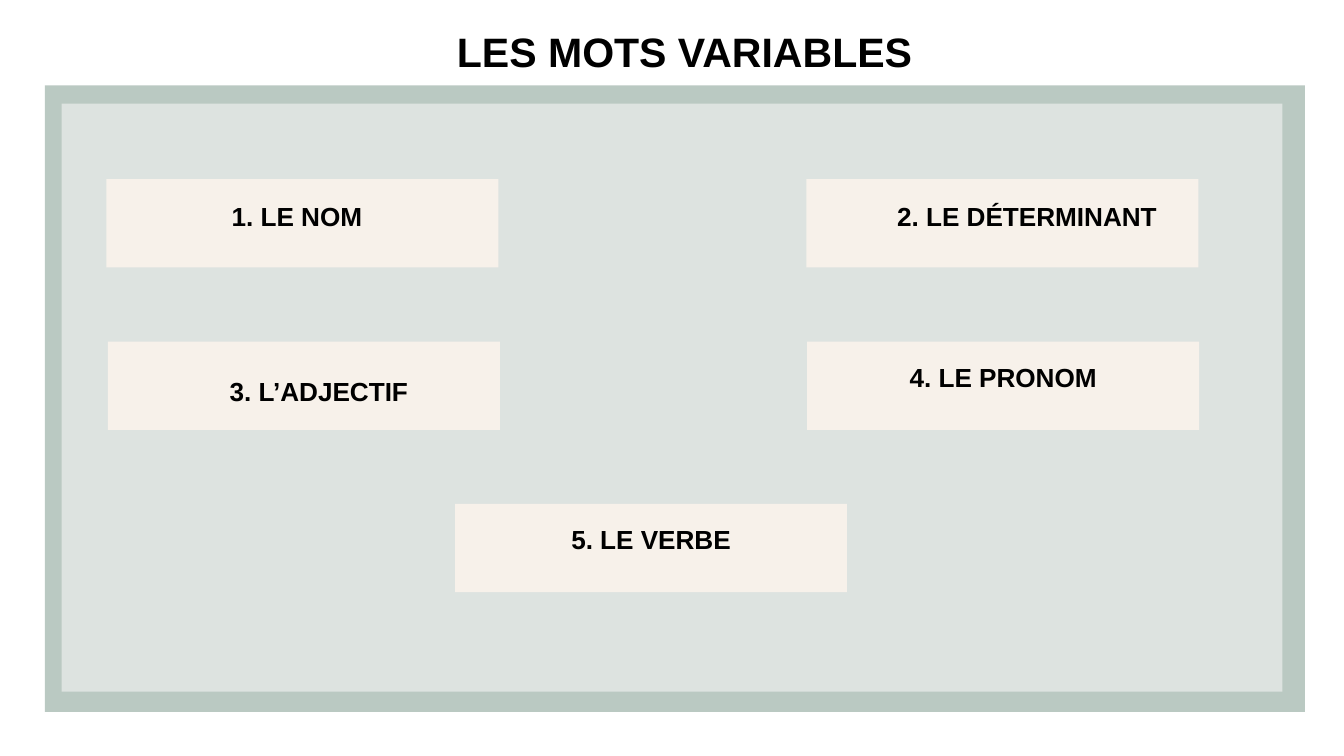
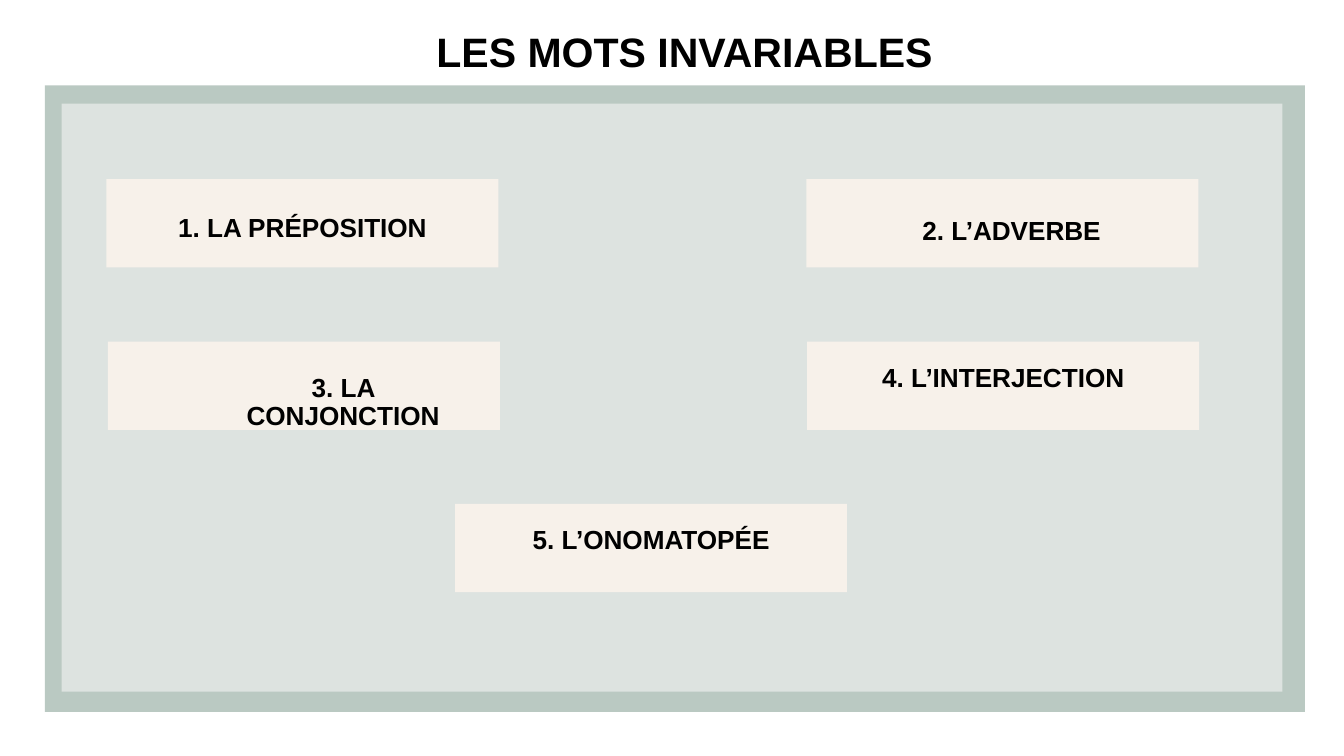
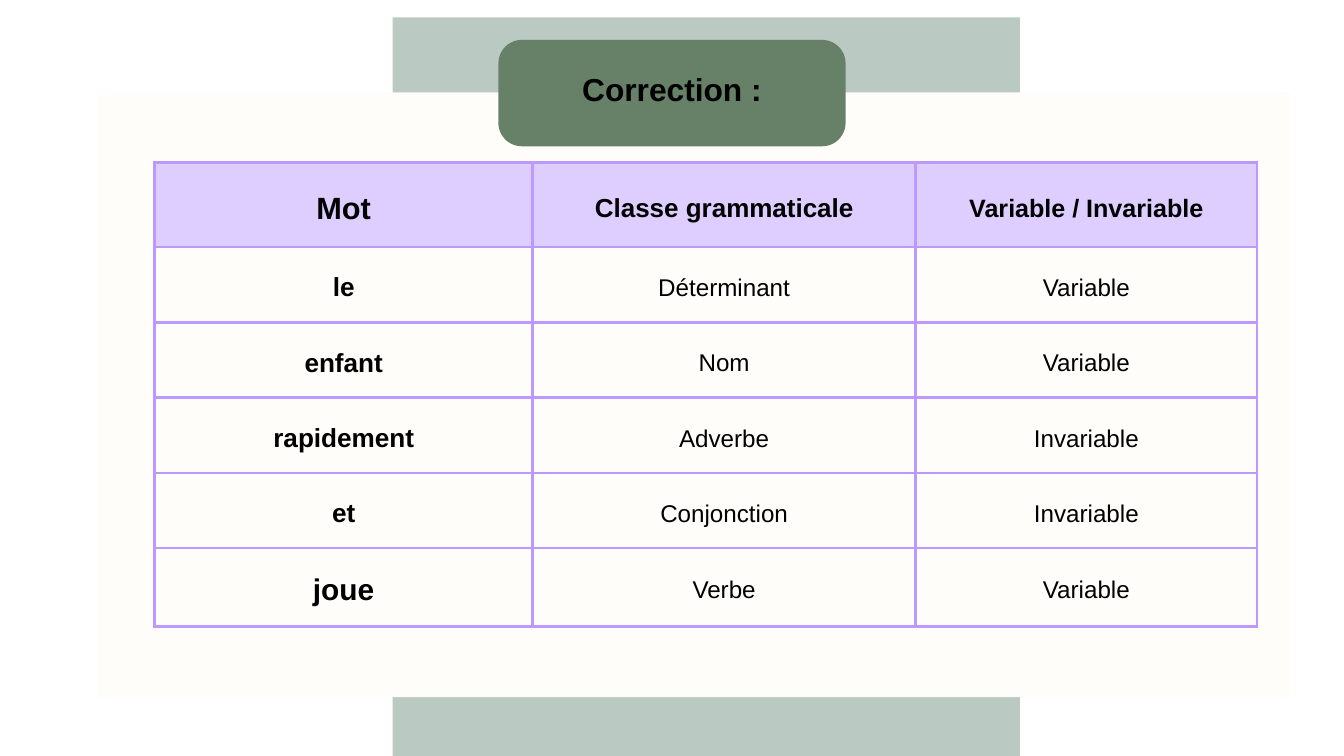
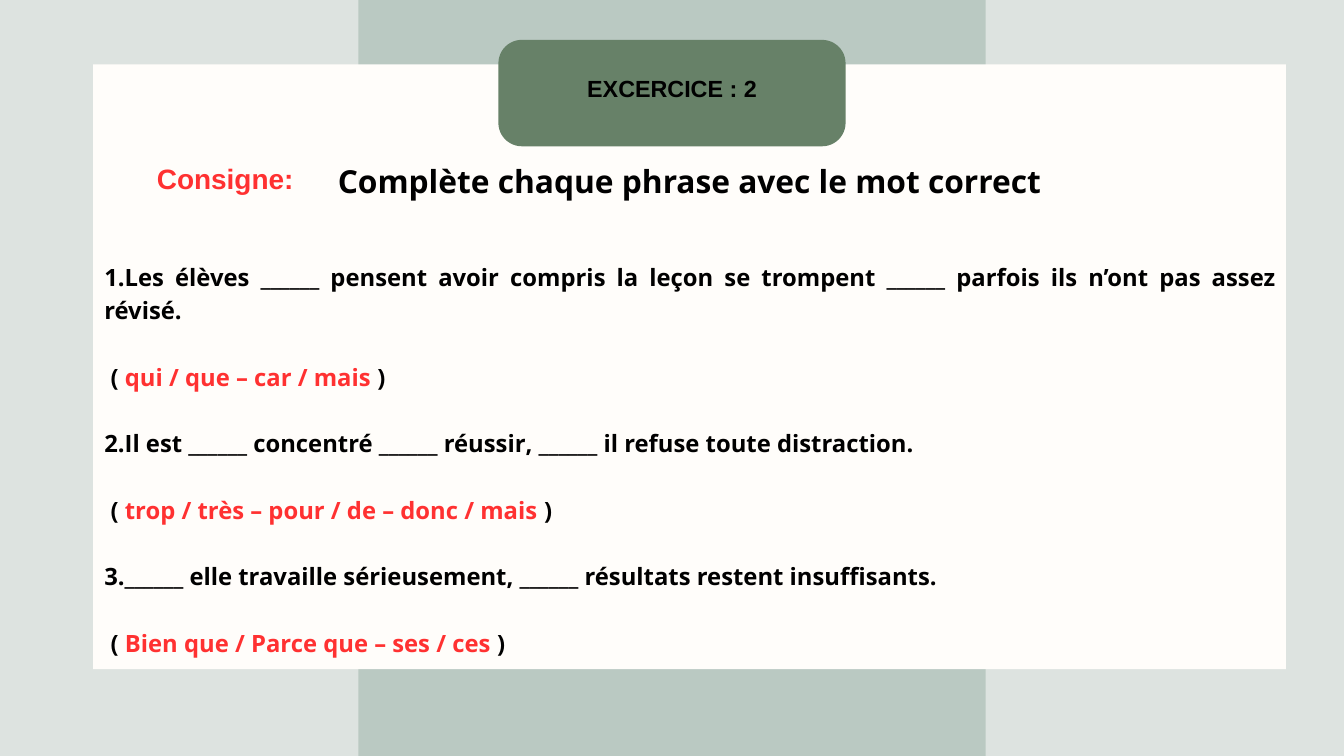
from dataclasses import dataclass

from lxml import etree
from pptx import Presentation
from pptx import util as u
from pptx.dml import color
from pptx.enum import shapes, text
from pptx.oxml import ns

EMU_PER_PX = 9525
CENTER, LEFT = text.PP_ALIGN.CENTER, text.PP_ALIGN.LEFT
JUSTIFY = text.PP_ALIGN.JUSTIFY
TOP, MIDDLE = text.MSO_ANCHOR.TOP, text.MSO_ANCHOR.MIDDLE
RECTANGLE = shapes.MSO_SHAPE.RECTANGLE
ROUNDED = shapes.MSO_SHAPE.ROUNDED_RECTANGLE


@dataclass(frozen=True)
class Style:
    """Type size and line pitch in points, with face and weight."""

    size: float
    pitch: float = None
    bold: bool = True
    font: str = "Arial"


@dataclass(frozen=True)
class Theme:
    """Colours and type styles shared by the slides."""

    white: str = "FFFFFF"
    ink: str = "000000"
    red: str = "FF3131"
    sage: str = "BAC9C2"
    mist: str = "DDE3E0"
    sand: str = "F7F1EA"
    cream: str = "FFFDFA"
    moss: str = "678168"
    lilac: str = "DECDFF"
    violet: str = "BB99FF"
    title: Style = Style(44, 49)
    caption: Style = Style(28, 29.7)
    loose_caption: Style = Style(28)
    correction: Style = Style(34, 47.6)
    exercise: Style = Style(25, 35)
    label: Style = Style(30, 42)
    instruction: Style = Style(34, 47.6, font="Open Sans")
    sentence: Style = Style(25.5, 35.7, font="Open Sans")
    headings: tuple = (Style(32.9, 46), Style(27.9, 39), Style(26.9, 37.6))
    word: Style = Style(28, 37.6)
    big_word: Style = Style(32, 41.8)
    answer: Style = Style(25.9, 36.2, bold=False)


THEME = Theme()
CARD_SIZE = (560, 126)
CARD_SPOTS = [(152, 256), (1152, 256), (154, 488), (1153, 488), (650, 720)]
CARD_INSET = 33


def px(length):
    """Turn px into EMU."""
    return u.Emu(length * EMU_PER_PX)


def rgb(code):
    """Turn a hex code into a colour."""
    return color.RGBColor.from_string(code)


def new_slide(deck, layout, background):
    """Add a slide with a plain background."""
    slide = deck.slides.add_slide(deck.slide_layouts.get_by_name(layout))
    slide.background.fill.solid()
    slide.background.fill.fore_color.rgb = rgb(background)
    return slide


def write(paragraph, parts, style, align=CENTER):
    """Write (wording, colour) parts as the runs of a paragraph."""
    paragraph.alignment = align
    if style.pitch:
        paragraph.line_spacing = u.Pt(style.pitch)
    for wording, ink in parts:
        run = paragraph.add_run()
        run.text = wording
        run.font.name = style.font
        run.font.size = u.Pt(style.size)
        run.font.bold = style.bold
        run.font.color.rgb = rgb(ink)


def set_frame(holder, inset, anchor=TOP, top=None):
    """Set wrapping, anchor and insets, and return the text frame."""
    frame = holder.text_frame
    frame.word_wrap = True
    frame.auto_size = text.MSO_AUTO_SIZE.NONE
    frame.vertical_anchor = anchor
    frame.margin_left = frame.margin_right = frame.margin_bottom = px(inset)
    frame.margin_top = px(inset if top is None else top)
    return frame


def add_block(slide, box, fill, kind=RECTANGLE):
    """Add a flat filled shape without outline."""
    block = slide.shapes.add_shape(kind, *map(px, box))
    block.shadow.inherit = False
    block.fill.solid()
    block.fill.fore_color.rgb = rgb(fill)
    block.line.fill.background()
    return block


def add_label(slide, box, wording, style, ink=THEME.ink, align=CENTER, inset=0):
    """Add a one-paragraph text box."""
    label = slide.shapes.add_textbox(*map(px, box))
    write(set_frame(label, inset).paragraphs[0], [(wording, ink)], style, align)


def place(holder, box):
    """Move a placeholder to a box, in front of what is drawn so far."""
    holder.left, holder.top, holder.width, holder.height = map(px, box)
    siblings = holder._element.getparent()
    siblings.append(holder._element)


def set_title(slide, box, wording, style, inset=0, anchor=TOP):
    """Place and write the title."""
    title = slide.shapes.title
    place(title, box)
    frame = set_frame(title, inset, anchor)
    write(frame.paragraphs[0], [(wording, THEME.ink)], style)


def add_word_classes(deck, heading, captions, loose):
    """Build a framed slide of five cards, with loose captions for the first three."""
    slide = new_slide(deck, "Title Only", THEME.white)
    add_block(slide, (64, 122, 1800, 895), THEME.sage)
    set_title(slide, (424, 43, 1109, 66), heading, THEME.title)
    add_block(slide, (88, 148, 1744, 840), THEME.mist)
    cards = [add_block(slide, spot + CARD_SIZE, THEME.sand) for spot in CARD_SPOTS]
    for card, caption in zip(cards[3:], captions[3:]):
        frame = set_frame(card, 10, top=CARD_INSET)
        write(frame.paragraphs[0], [(caption, THEME.ink)], THEME.caption)
    for caption, (box, style, align) in zip(captions, loose):
        add_label(slide, box, caption, style, align=align, inset=5)


def add_worksheet(deck, layout, background, band, panel, heading, style):
    """Build a slide with a vertical band, a cream panel and a title badge."""
    slide = new_slide(deck, layout, background)
    add_block(slide, band + (896, 1080), THEME.sage)
    add_block(slide, panel + (1704, 864), THEME.cream)
    badge = add_block(slide, (712, 57, 496, 152), THEME.moss, ROUNDED)
    badge.adjustments[0] = 0.22
    set_title(slide, (712, 35, 496, 174), heading, style, 6, MIDDLE)
    return slide


def set_borders(cell, ink, points):
    """Draw the four borders of a cell."""
    properties = cell._tc.get_or_add_tcPr()
    for index, side in enumerate("LRTB"):
        edge = etree.Element(ns.qn(f"a:ln{side}"), w=str(u.Pt(points)))
        fill = etree.SubElement(edge, ns.qn("a:solidFill"))
        etree.SubElement(fill, ns.qn("a:srgbClr"), val=ink)
        properties.insert(index, edge)


def fill_cell(cell, wording, style, fill=None):
    """Write, fill and border a table cell."""
    cell.vertical_anchor = MIDDLE
    cell.margin_left = cell.margin_right = px(20)
    cell.margin_top = cell.margin_bottom = px(20)
    if fill:
        cell.fill.solid()
        cell.fill.fore_color.rgb = rgb(fill)
    else:
        cell.fill.background()
    set_borders(cell, THEME.violet, 3)
    write(cell.text_frame.paragraphs[0], [(wording, THEME.ink)], style)


def add_answers(slide, headings, answers):
    """Add the table of words and their classes."""
    widths = (540, 547, 488)
    heights = (121, 108, 107, 108, 107, 112)
    box = (221, 232, sum(widths), sum(heights))
    grid = slide.shapes.add_table(len(heights), len(widths), *map(px, box)).table
    grid.first_row = grid.horz_banding = False
    for column, width in zip(grid.columns, widths):
        column.width = px(width)
    for row, height in zip(grid.rows, heights):
        row.height = px(height)
    for column, heading in enumerate(headings):
        fill_cell(grid.cell(0, column), heading, THEME.headings[column], THEME.lilac)
    for row, (word, *classes) in enumerate(answers, 1):
        is_last = row == len(answers)
        fill_cell(grid.cell(row, 0), word, THEME.big_word if is_last else THEME.word)
        for column, answer in enumerate(classes, 1):
            fill_cell(grid.cell(row, column), answer, THEME.answer)


def add_sentences(slide, box, questions):
    """Fill the body with sentences, each followed by its choices."""
    body = slide.placeholders[1]
    place(body, box)
    frame = set_frame(body, 0)
    lines = []
    for sentence, choices in questions:
        lines.append((0, [(sentence, THEME.ink)]))
        lines.append((9, [("( ", THEME.ink), (choices, THEME.red), (" )", THEME.ink)]))
    for index, (indent, parts) in enumerate(lines):
        paragraph = frame.add_paragraph() if index else frame.paragraphs[0]
        properties = paragraph._p.get_or_add_pPr()
        properties.set("marL", str(px(indent)))
        properties.set("indent", "0")
        etree.SubElement(properties, ns.qn("a:buNone"))
        paragraph.space_before = u.Pt(THEME.sentence.pitch if index else 0)
        write(paragraph, parts, THEME.sentence, JUSTIFY)


def main():
    """Build and save the deck."""
    deck = Presentation()
    deck.slide_width, deck.slide_height = px(1920), px(1080)

    add_word_classes(
        deck,
        "LES MOTS VARIABLES",
        ["1. LE NOM", "2. LE DÉTERMINANT", "3. L’ADJECTIF", "4. LE PRONOM", "5. LE VERBE"],
        [
            ((231, 287, 386, 50), THEME.caption, CENTER),
            ((1223, 287, 488, 50), THEME.caption, CENTER),
            ((323, 531, 334, 55), THEME.loose_caption, LEFT),
        ],
    )
    add_word_classes(
        deck,
        "LES MOTS INVARIABLES",
        ["1. LA PRÉPOSITION", "2. L’ADVERBE", "3. LA CONJONCTION",
         "4. L’INTERJECTION", "5. L’ONOMATOPÉE"],
        [
            ((239, 302, 386, 50), THEME.caption, CENTER),
            ((1201, 306, 488, 50), THEME.caption, CENTER),
            ((323, 531, 334, 50), THEME.caption, CENTER),
        ],
    )

    correction = add_worksheet(
        deck, "Title Only", THEME.white, (561, 25), (139, 132),
        "Correction :", THEME.correction,
    )
    add_answers(
        correction,
        ["Mot", "Classe grammaticale", "Variable / Invariable"],
        [
            ("le", "Déterminant", "Variable"),
            ("enfant", "Nom", "Variable"),
            ("rapidement", "Adverbe", "Invariable"),
            ("et", "Conjonction", "Invariable"),
            ("joue", "Verbe", "Variable"),
        ],
    )

    exercise = add_worksheet(
        deck, "Title and Content", THEME.mist, (512, 0), (133, 92),
        "EXCERCICE : 2", THEME.exercise,
    )
    add_label(exercise, (224, 223, 1696, 54), "Consigne:", THEME.label, THEME.red, LEFT)
    add_label(exercise, (133, 222, 1704, 60),
              "Complète chaque phrase avec le mot correct", THEME.instruction)
    add_sentences(
        exercise,
        (149, 368, 1675, 610),
        [
            ("1.Les élèves ______ pensent avoir compris la leçon se trompent ______ "
             "parfois ils n’ont pas assez révisé.",
             "qui / que – car / mais"),
            ("2.Il est ______ concentré ______ réussir, ______ il refuse toute distraction.",
             "trop / très – pour / de – donc / mais"),
            ("3.______ elle travaille sérieusement, ______ résultats restent insuffisants.",
             "Bien que / Parce que – ses / ces"),
        ],
    )
    deck.save("out.pptx")


if __name__ == "__main__":
    main()
